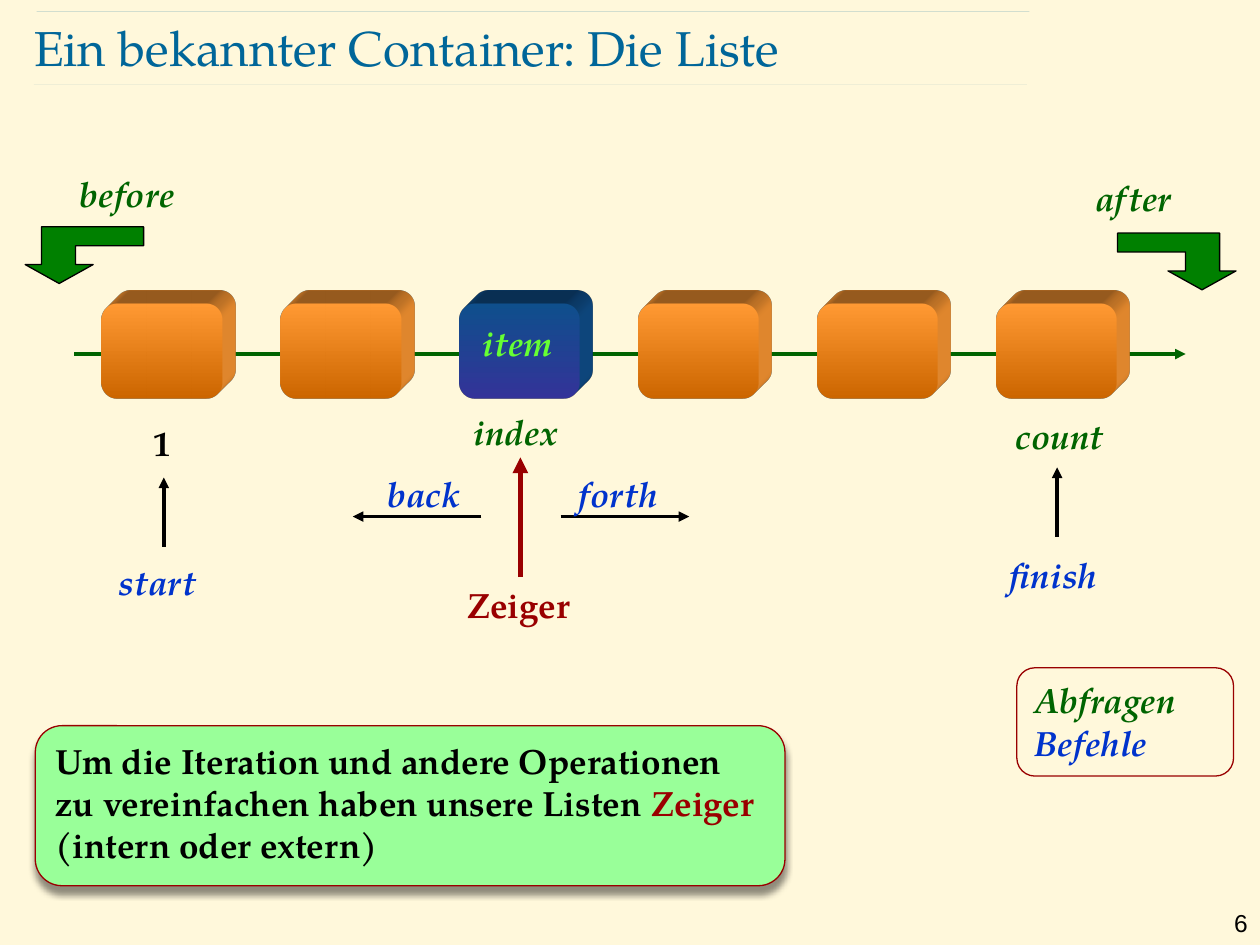
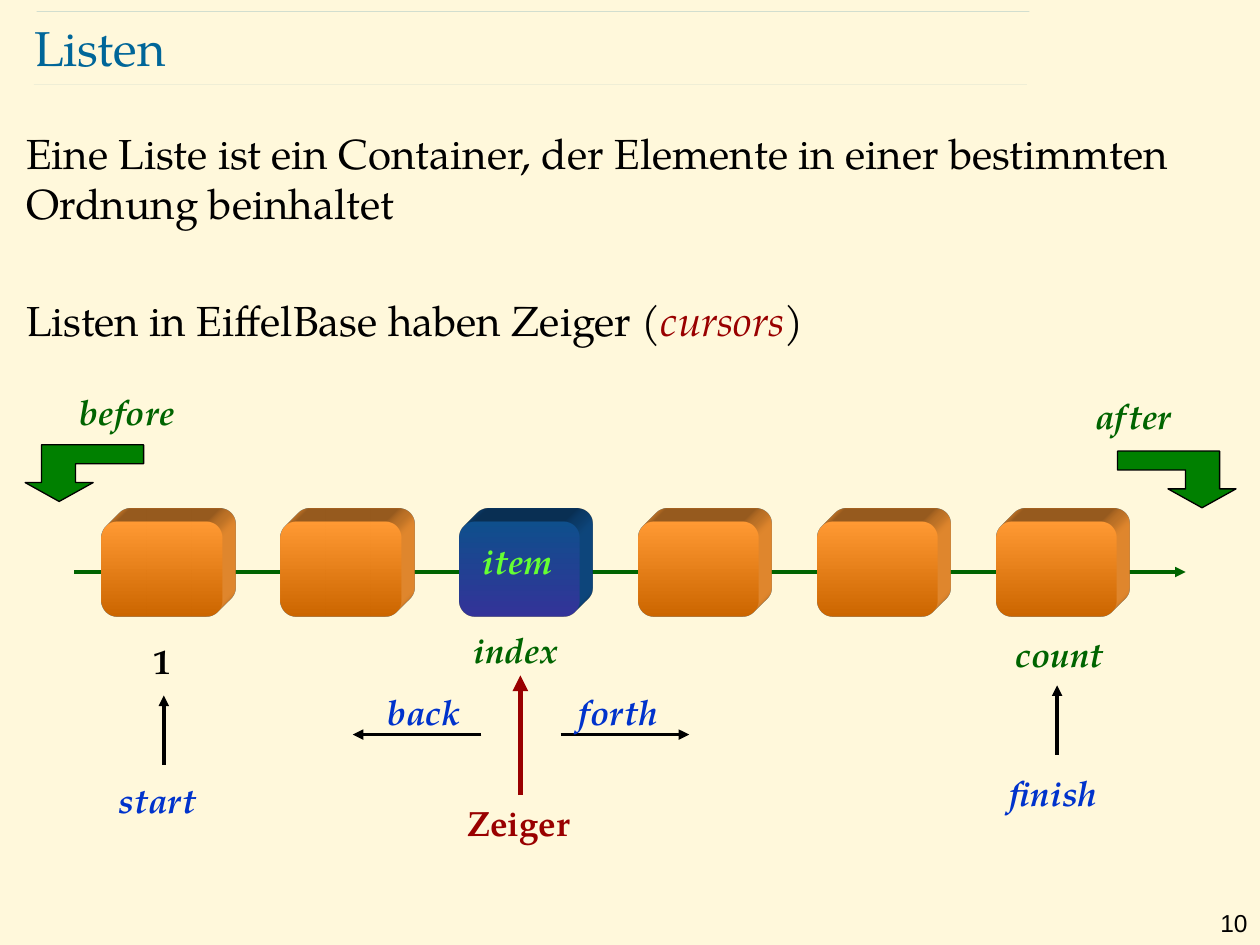
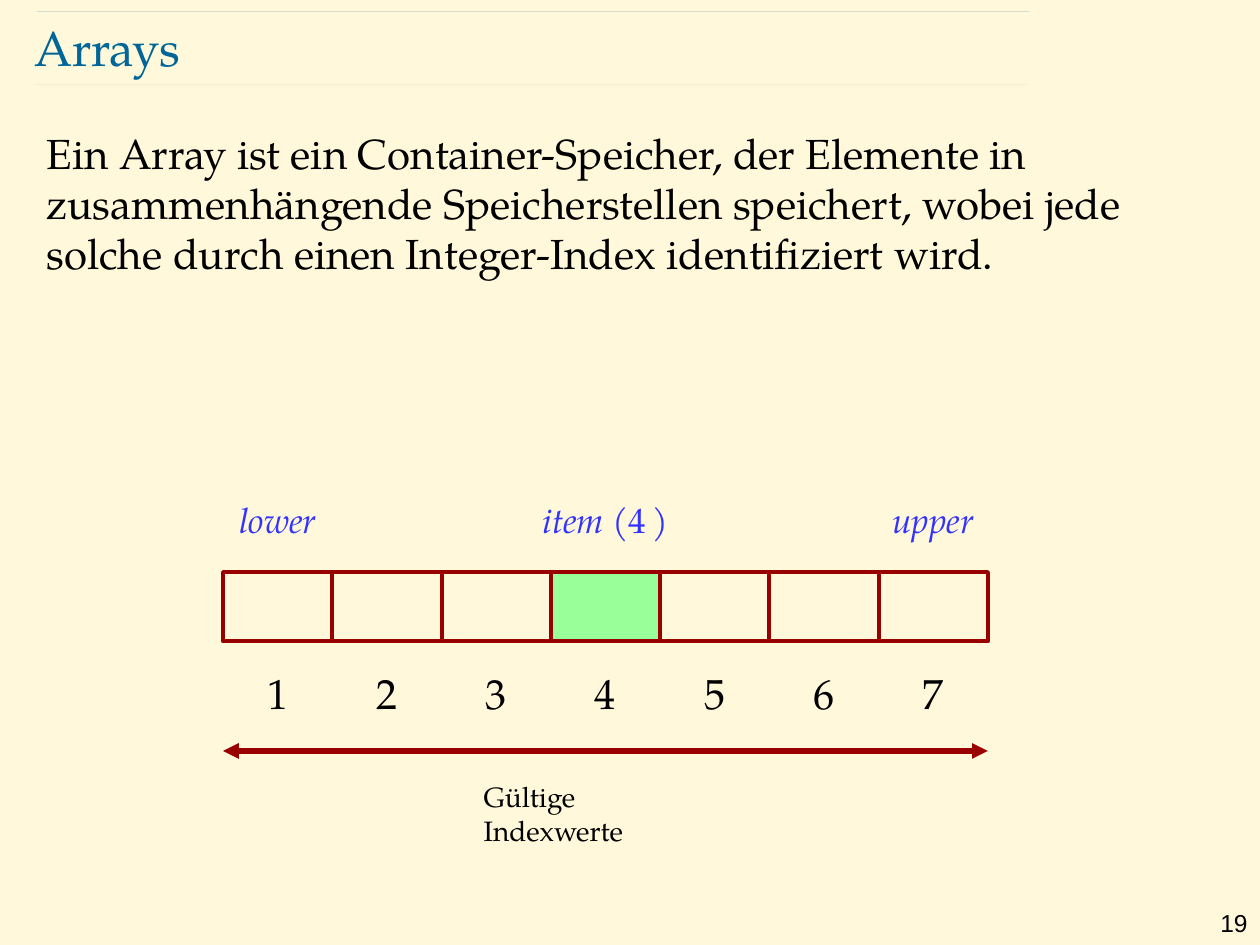
"""Build three slides on lists and arrays as containers."""
from pptx import Presentation, oxml, util as u
from pptx.dml.color import RGBColor
from pptx.enum import shapes, text

CREAM = RGBColor(0xFF, 0xF8, 0xDB)
TEAL = RGBColor(0x00, 0x66, 0x99)
BLACK = RGBColor(0x00, 0x00, 0x00)
RED = RGBColor(0x99, 0x00, 0x00)
GREEN = RGBColor(0x00, 0x64, 0x00)
ARROW = RGBColor(0x00, 0x80, 0x00)
BLUE = RGBColor(0x00, 0x33, 0xCC)
VIOLET = RGBColor(0x33, 0x33, 0xFF)
LIME = RGBColor(0x66, 0xFF, 0x33)
MINT = RGBColor(0x99, 0xFF, 0x99)
ORANGE = (RGBColor(0xFF, 0x99, 0x33), RGBColor(0xCC, 0x66, 0x00))
NAVY = (RGBColor(0x0F, 0x4F, 0x8C), RGBColor(0x33, 0x33, 0x99))
SERIF, SANS = "TeX Gyre Pagella", "Arial"
LEFT, CENTER, RIGHT = (text.PP_ALIGN.LEFT, text.PP_ALIGN.CENTER,
                       text.PP_ALIGN.RIGHT)
TOP, MIDDLE = text.MSO_ANCHOR.TOP, text.MSO_ANCHOR.MIDDLE
NS = 'xmlns:a="http://schemas.openxmlformats.org/drawingml/2006/main"'

LABELS = [
    ("item", 3.66, 1.09, 0.9, LIME, True),
    ("Zeiger", 3.41, 3.17, 1.41, RED, False),
    ("forth", 4.45, 2.29, 0.91, BLUE, True),
    ("back", 2.91, 2.29, 0.91, BLUE, True),
    ("after", 8.54, -0.06, 0.91, GREEN, True),
    ("before", 0.3, -0.09, 1.42, GREEN, True),
    ("index", 3.62, 1.8, 0.95, GREEN, True),
    ("count", 7.89, 1.83, 1.04, GREEN, True),
    ("1", 0.83, 1.89, 0.91, BLACK, False),
    ("finish", 7.77, 2.93, 1.18, BLUE, True),
    ("start", 0.66, 2.99, 1.18, BLUE, True),
]
MOVES = [
    (4.13, 3.17, 4.13, 2.22, RED, 3),
    (4.45, 2.69, 5.47, 2.69, BLACK, 2),
    (3.82, 2.69, 2.8, 2.69, BLACK, 2),
    (1.3, 2.93, 1.3, 2.38, BLACK, 2),
    (8.39, 2.85, 8.39, 2.3, BLACK, 2),
]
BENT = [(0.27, 0.45), (0.54, 0.3), (0.4, 0.3), (0.4, 0.15), (0.94, 0.15),
        (0.94, 0), (0.13, 0), (0.13, 0.3), (0, 0.3)]
CUBES, CURSOR = 6, 2
CELLS, CHOSEN = 7, 4
NOTE = [[("Um die Iteration und andere Operationen zu vereinfachen haben "
          "unsere Listen ", {}), ("Zeiger ", {"color": RED}),
         ("(intern oder extern)", {})]]
KEY = [[("Abfragen", {"color": GREEN})], [("Befehle", {"color": BLUE})]]
LISTS = [
    [("Eine Liste ist ein Container, der Elemente in einer bestimmten "
      "Ordnung beinhaltet", {})],
    [("Listen in EiffelBase haben Zeiger (", {}),
     ("cursors", {"color": RED, "italic": True}), (")", {})],
]
ARRAYS = ("Ein Array ist ein Container-Speicher, der Elemente in "
          "zusammenhängende Speicherstellen speichert, wobei jede solche "
          "durch einen Integer-Index identifiziert wird.")
ITEM = [[("item", {"italic": True}), (" (4", {}), (" ", {"size": 14}),
         (")", {})]]


def style(font, size=None, color=None, bold=None, italic=None, name=None):
    if size:
        font.size = u.Pt(size)
    if color is not None:
        font.color.rgb = color
    if bold is not None:
        font.bold = bold
    if italic is not None:
        font.italic = italic
    if name:
        font.name = name


def write(shape, paras, size, color=BLACK, align=LEFT, anchor=TOP, gap=0,
          lead=None, inset=(0.1, 0.05, 0.1, 0.05), bold=False, italic=False,
          name=SERIF):
    frame = shape.text_frame
    frame.word_wrap = True
    frame.vertical_anchor = anchor
    (frame.margin_left, frame.margin_top, frame.margin_right,
     frame.margin_bottom) = map(u.Inches, inset)
    if isinstance(paras, str):
        paras = [[(paras, {})]]
    for i, runs in enumerate(paras):
        para = frame.add_paragraph() if i else frame.paragraphs[0]
        para.alignment = align
        if i:
            para.space_before = u.Pt(gap)
        if lead:
            para.line_spacing = lead
        style(para.font, size, color, bold, italic, name)
        for words, look in runs:
            run = para.add_run()
            run.text = words
            style(run.font, **look)


def label(slide, box, paras, size, **look):
    write(slide.shapes.add_textbox(*map(u.Inches, box)), paras, size, **look)


def block(slide, kind, box, fill=None, line=None, width=0.75):
    shape = slide.shapes.add_shape(kind, *map(u.Inches, box))
    shape.shadow.inherit = False
    if fill is None:
        shape.fill.background()
    else:
        shape.fill.solid()
        shape.fill.fore_color.rgb = fill
    if line is None:
        shape.line.fill.background()
    else:
        shape.line.color.rgb = line
        shape.line.width = u.Pt(width)
    return shape


def stroke(slide, ends, color, width, heads=(), alpha=None):
    line = slide.shapes.add_connector(shapes.MSO_CONNECTOR.STRAIGHT,
                                      *map(u.Inches, ends))
    line.line.color.rgb = color
    line.line.width = u.Pt(width)
    props = line.line._get_or_add_ln()
    if alpha:
        props.find(".//{*}srgbClr").append(
            oxml.parse_xml(f'<a:alpha {NS} val="{alpha * 1000}"/>'))
    for head in heads:
        props.append(oxml.parse_xml(f'<a:{head} {NS} type="triangle"/>'))
    line._element.spPr.append(oxml.parse_xml(f"<a:effectLst {NS}/>"))


def cube(slide, x, y, colors):
    shape = block(slide, shapes.MSO_SHAPE.ROUNDED_RECTANGLE,
                  (x, y, 0.95, 0.75))
    shape.fill.gradient()
    shape.fill.gradient_angle = 270
    for stop, color, place in zip(shape.fill.gradient_stops, colors, (0, 1)):
        stop.color.rgb = color
        stop.position = place
    props = shape._element.spPr
    props.append(oxml.parse_xml(
        f'<a:scene3d {NS}><a:camera prst="legacyObliqueTopRight"/>'
        '<a:lightRig rig="legacyFlat3" dir="b"/></a:scene3d>'))
    props.append(oxml.parse_xml(
        f'<a:sp3d {NS} extrusionH="{u.Inches(0.3)}" '
        'prstMaterial="legacyMatte"><a:extrusionClr>'
        f'<a:srgbClr val="{colors[0]}"/></a:extrusionClr></a:sp3d>'))


def bend(slide, x, y, side):
    points = [(u.Inches(x + side * dx), u.Inches(y + dy)) for dx, dy in BENT]
    build = slide.shapes.build_freeform(*points[0])
    build.add_line_segments(points[1:])
    shape = build.convert_to_shape()
    shape.shadow.inherit = False
    shape.fill.solid()
    shape.fill.fore_color.rgb = ARROW
    shape.line.color.rgb = BLACK
    shape.line.width = u.Pt(0.75)


def start(deck, title, number):
    slide = deck.slides.add_slide(deck.slide_layouts[6])
    slide.background.fill.solid()
    slide.background.fill.fore_color.rgb = CREAM
    for x, y in ((0.27, 0.67), (0.29, 0.09)):
        stroke(slide, (x, y, x + 7.88, y), TEAL, 0.1, alpha=49)
    label(slide, (9.45, 7.16, 0.55, 0.24), str(number), 14, align=RIGHT,
          name=SANS)
    label(slide, (0.27, 0.13, 8.69, 0.48), title, 28, color=TEAL,
          anchor=MIDDLE, inset=(0, 0, 0, 0))
    return slide


def chain(slide, top):
    """Draw the list with its cursor, queries and commands below top."""
    stroke(slide, (0.59, top + 1.4, 9.41, top + 1.4), GREEN, 2, ["tailEnd"])
    for i in range(CUBES):
        cube(slide, 0.81 + 1.42 * i, top + 1, NAVY if i == CURSOR else ORANGE)
    bend(slide, 0.2, top + 0.39, 1)
    bend(slide, 9.81, top + 0.44, -1)
    for x, y, right, low, color, width in MOVES:
        stroke(slide, (x, top + y, right, top + low), color, width,
               ["tailEnd"])
    for words, x, y, width, color, italic in LABELS:
        label(slide, (x, top + y, width, 0.43), words, 20, color=color,
              align=CENTER, bold=True, italic=italic)


def row(slide, left, top, total):
    """Draw the array cells with their indexes and valid range."""
    step = total / CELLS
    spots = [left + step * i for i in range(CELLS)]
    for i in sorted(range(CELLS), key=lambda i: i + 1 == CHOSEN):
        block(slide, shapes.MSO_SHAPE.FLOWCHART_PROCESS,
              (spots[i], top, step, 0.55),
              MINT if i + 1 == CHOSEN else None, RED, 2.25)
        label(slide, (spots[i], top + 0.71, step, 0.5), str(i + 1), 24,
              align=CENTER)
    stroke(slide, (left, top + 1.42, left + total, top + 1.42), RED, 3,
           ["headEnd", "tailEnd"])
    for words, i, width, italic in (("lower", 0, 1.02, True),
                                    (ITEM, 3, 1.42, False),
                                    ("upper", 6, 1.02, True)):
        x = spots[i] + (step - width) / 2
        label(slide, (x, top - 0.63, width, 0.43), words, 20, color=VIOLET,
              align=CENTER, italic=italic)
    label(slide, (3.74, top + 1.6, 1.95, 0.6), "Gültige Indexwerte", 16)


def main():
    deck = Presentation()
    deck.slide_width, deck.slide_height = u.Inches(10), u.Inches(7.5)

    slide = start(deck, "Ein bekannter Container: Die Liste", 6)
    chain(slide, 1.41)
    round_box = shapes.MSO_SHAPE.ROUNDED_RECTANGLE
    note = block(slide, round_box, (0.28, 5.76, 5.95, 1.27), MINT, RED)
    note._element.spPr.find("{*}effectLst").append(oxml.parse_xml(
        f'<a:outerShdw {NS} blurRad="{u.Pt(4)}" dist="{u.Pt(4)}" '
        'dir="5400000" rotWithShape="0"><a:srgbClr val="000000">'
        '<a:alpha val="43000"/></a:srgbClr></a:outerShdw>'))
    write(note, NOTE, 20, bold=True)
    key = block(slide, round_box, (8.07, 5.3, 1.72, 0.86), line=RED)
    write(key, KEY, 20, bold=True, italic=True, gap=10, lead=0.6,
          inset=(0.1, 0.16, 0.1, 0.05))

    slide = start(deck, "Listen", 10)
    label(slide, (0.11, 0.96, 9.73, 2), LISTS, 24, gap=38)
    chain(slide, 3.14)

    slide = start(deck, "Arrays", 19)
    label(slide, (0.27, 0.96, 9.4, 1.5), ARRAYS, 24)
    row(slide, 1.77, 4.54, 6.07)

    deck.save("out.pptx")


if __name__ == "__main__":
    main()
